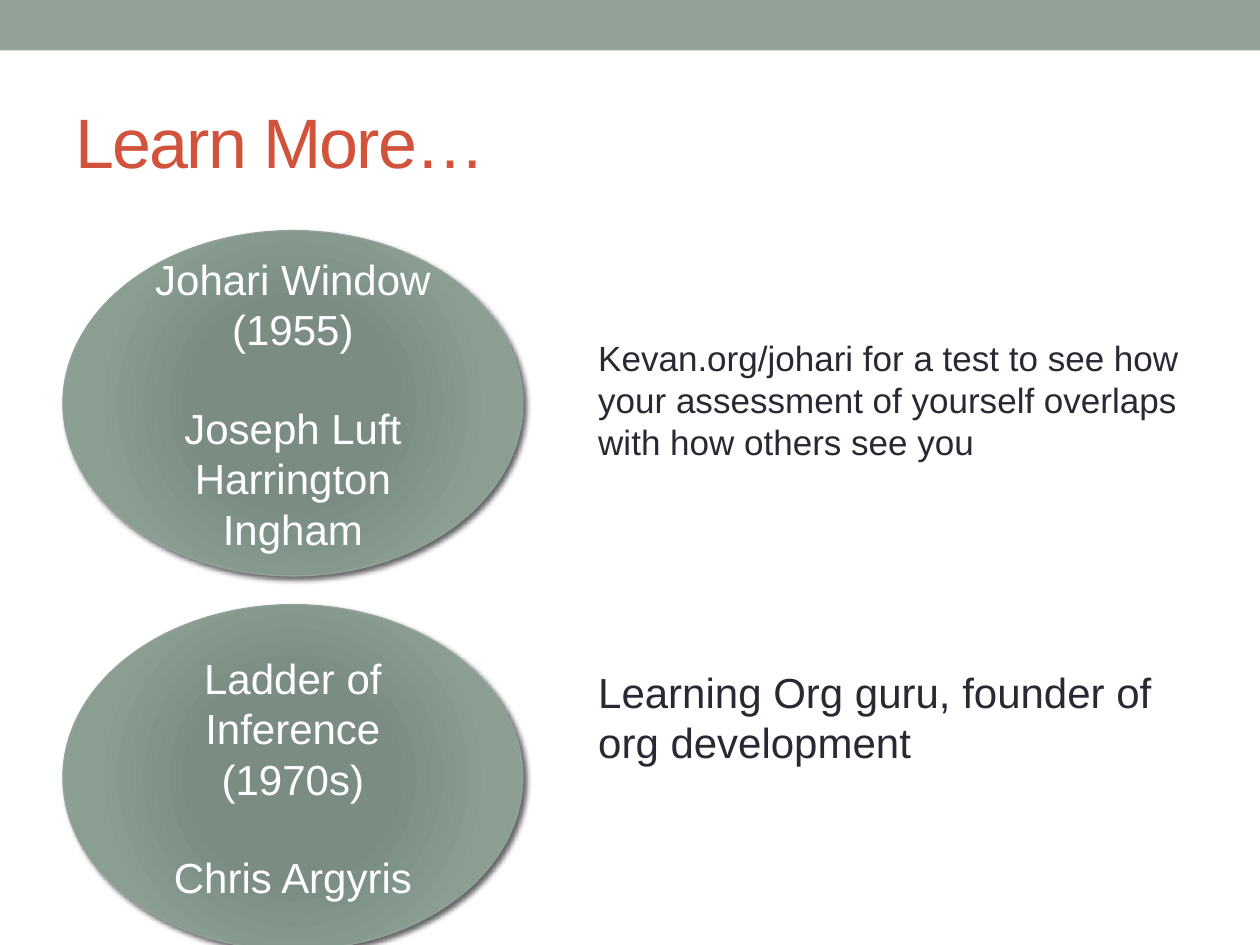
from lxml.etree import SubElement
from pptx import Presentation
from pptx.dml.color import RGBColor as RGB
from pptx.enum.shapes import MSO_SHAPE as SHAPE
from pptx.enum.text import MSO_ANCHOR as ANCHOR, PP_ALIGN as ALIGN
from pptx.oxml import parse_xml
from pptx.oxml.ns import nsdecls, qn
from pptx.util import Cm, Pt

COLORS = {"sage": "93A299", "title": "D2533C", "body": "292934", "white": "FFFFFF",
          "shadow": "000000"}
STOPS = [(0, "7B8E82"), (34, "7B8D83"), (70, "8A9E92"), (100, "93A299")]
FONT = "Arial"
TITLE = "Learn More…"
TOPICS = [
    {"concept": "Johari Window (1955)",
     "authors": ["Joseph Luft", "Harrington Ingham"],
     "note": "Kevan.org/johari for a test to see how your assessment of yourself "
             "overlaps with how others see you",
     "size": 20, "note_top": 6.66, "note_height": 2.85},
    {"concept": "Ladder of Inference (1970s)",
     "authors": ["Chris Argyris"],
     "note": "Learning Org guru, founder of org development",
     "size": 24, "note_top": 13.31, "note_height": 2.31},
]
LEFT, TOP, WIDTH, HEIGHT, PITCH = 1.27, 4.65, 9.27, 6.96, 7.54
NOTE_LEFT, NOTE_WIDTH = 11.81, 12.93
AUTHOR_GAP = 27.6


def color(name):
    return RGB.from_string(COLORS[name])


def write(sp, paragraphs, size=24, fill="body", align=ALIGN.LEFT,
          anchor=ANCHOR.TOP, gap=0, spacing=0):
    tf = sp.text_frame
    tf.word_wrap = True
    tf.vertical_anchor = anchor
    for i, text in enumerate(paragraphs):
        p = tf.add_paragraph() if i else tf.paragraphs[0]
        p.alignment = align
        if i == 1 and gap:
            p.space_before = Pt(gap)
        r = p.add_run()
        r.text = text
        r.font.name = FONT
        r.font.size = Pt(size)
        r.font.color.rgb = color(fill)
        if spacing:
            r.font._element.set("spc", str(spacing * 100))


def add_text(s, box, text, **fmt):
    write(s.shapes.add_textbox(*map(Cm, box)), [text], **fmt)


def add_oval(s, top):
    sp = s.shapes.add_shape(SHAPE.OVAL, Cm(LEFT), Cm(top), Cm(WIDTH), Cm(HEIGHT))
    sp.line.color.rgb = color("sage")
    sp.line.width = Pt(0.75)
    sp.shadow.inherit = False
    sp_pr = sp._element.spPr
    stops = "".join(f'<a:gs pos="{pos * 1000}"><a:srgbClr val="{rgb}"/></a:gs>'
                    for pos, rgb in STOPS)
    sp_pr.find(qn("a:prstGeom")).addnext(parse_xml(
        f'<a:gradFill {nsdecls("a")} rotWithShape="1"><a:gsLst>{stops}</a:gsLst>'
        '<a:path path="circle"><a:fillToRect l="100000" t="100000" r="100000" '
        'b="100000"/></a:path></a:gradFill>'))
    shadow = SubElement(sp_pr.find(qn("a:effectLst")), qn("a:outerShdw"),
                        blurRad=str(Pt(3)), dist=str(Pt(2)), dir=str(45 * 60000),
                        algn="ctr", rotWithShape="0")
    tint = SubElement(shadow, qn("a:srgbClr"), val=COLORS["shadow"])
    SubElement(tint, qn("a:alpha"), val="60000")
    return sp


def main():
    prs = Presentation()
    prs.slide_width, prs.slide_height = Cm(25.4), Cm(19.05)
    s = prs.slides.add_slide(prs.slide_layouts[6])

    band = s.shapes.add_shape(SHAPE.RECTANGLE, 0, 0, prs.slide_width, Cm(1.02))
    band.fill.solid()
    band.fill.fore_color.rgb = color("sage")
    band.line.fill.background()
    band.shadow.inherit = False

    add_text(s, (LEFT, 1.47, 22.86, 2.74), TITLE, size=40, fill="title",
             anchor=ANCHOR.MIDDLE, spacing=-1)
    for i, topic in enumerate(TOPICS):
        write(add_oval(s, TOP + i * PITCH), [topic["concept"], *topic["authors"]],
              fill="white", align=ALIGN.CENTER, anchor=ANCHOR.MIDDLE, gap=AUTHOR_GAP)
        add_text(s, (NOTE_LEFT, topic["note_top"], NOTE_WIDTH, topic["note_height"]),
                 topic["note"], size=topic["size"])

    prs.save("out.pptx")


if __name__ == "__main__":
    main()
